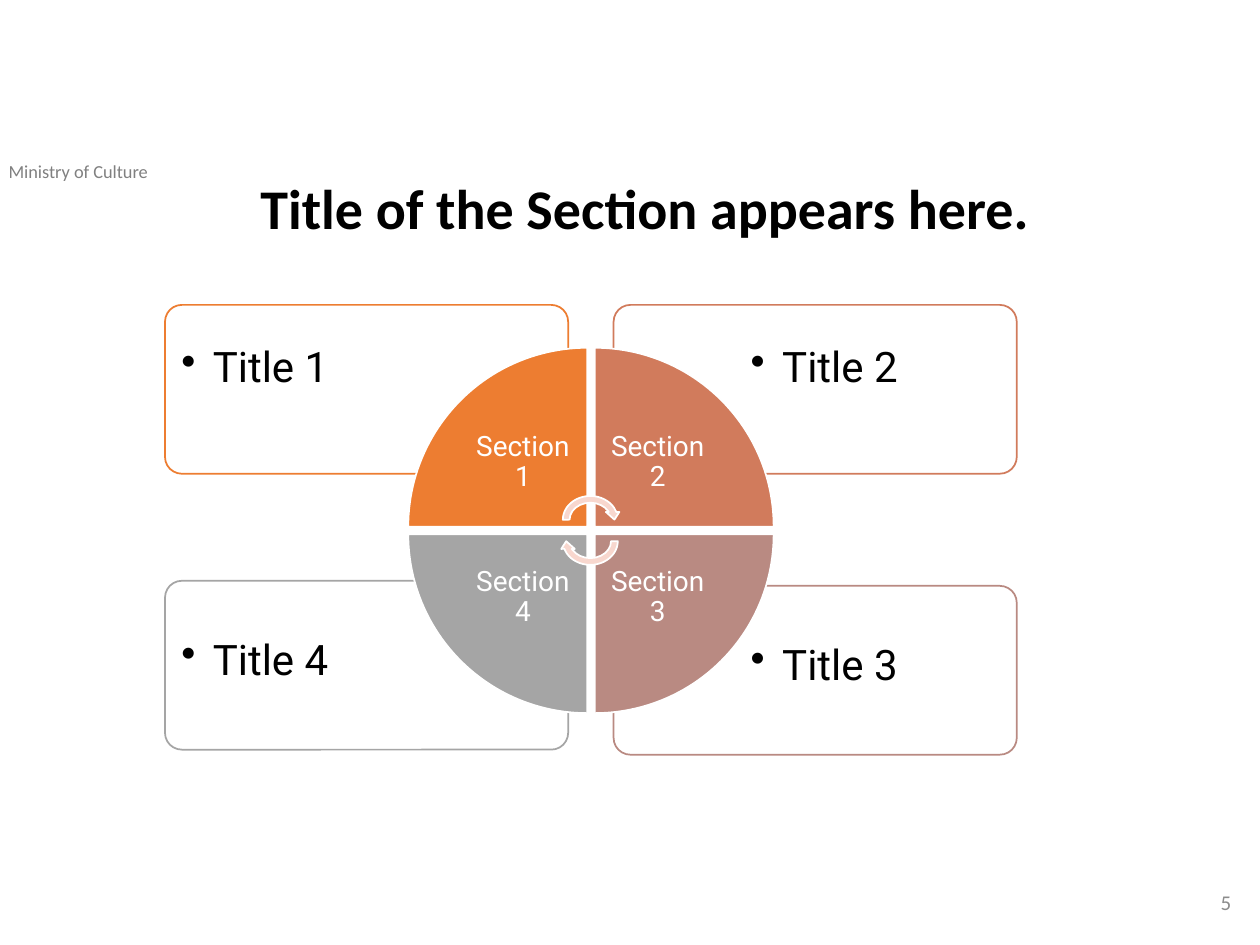
from lxml import etree
from pptx import Presentation
from pptx.dml.color import RGBColor
from pptx.enum.shapes import MSO_SHAPE
from pptx.enum.text import MSO_ANCHOR, MSO_AUTO_SIZE, PP_ALIGN
from pptx.oxml.ns import qn
from pptx.util import Inches, Pt

TOP, MIDDLE = MSO_ANCHOR.TOP, MSO_ANCHOR.MIDDLE
LEFT, CENTER, RIGHT = PP_ALIGN.LEFT, PP_ALIGN.CENTER, PP_ALIGN.RIGHT
CARD, WEDGE, ARROW = MSO_SHAPE.ROUNDED_RECTANGLE, MSO_SHAPE.PIE_WEDGE, MSO_SHAPE.CIRCULAR_ARROW

COLORS = {
    "white": "FFFFFF", "black": "000000", "header": "808080", "number": "8C8C8C",
    "orange": "ED7D31", "coral": "D17B5C", "rose": "B98A82", "gray": "A5A5A5",
    "arrow": "F8D7CE",
}
HEADER = "Ministry of Culture"
TITLE = "Title of the Section appears here."
PAGE_NUMBER = "5"
SECTIONS = [
    {"title": "Title 1", "label": "Section 1", "color": "orange", "column": 0, "row": 0, "card_top": 2.42},
    {"title": "Title 2", "label": "Section 2", "color": "coral", "column": 1, "row": 0, "card_top": 2.42},
    {"title": "Title 3", "label": "Section 3", "color": "rose", "column": 1, "row": 1, "card_top": 4.65},
    {"title": "Title 4", "label": "Section 4", "color": "gray", "column": 0, "row": 1, "card_top": 4.61},
]
CARD_LEFTS = (1.31, 4.87)
CARD_WIDTH, CARD_HEIGHT = 3.2, 1.34
TEXT_WIDTH, TEXT_HEIGHT, TEXT_MARGIN = 2.18, 0.95, 0.03
WEDGE_LEFTS, WEDGE_TOPS, WEDGE_SIZE = (3.24, 4.72), (2.76, 4.24), 1.42
LABEL_LEFTS, LABEL_TOPS, LABEL_SIZE = (3.65, 4.72), (3.17, 4.24), 1
ARROWS = [(3.91, 0), (4.08, 180)]


def rgb(name):
    return RGBColor.from_string(COLORS[name])


def place(item, left, top, width, height):
    item.left, item.top = Inches(left), Inches(top)
    item.width, item.height = Inches(width), Inches(height)


def write(box, text, size, color, font="Calibri", bold=False, align=LEFT, anchor=TOP,
          inset=None, spacing=None, bullet=False):
    frame = box.text_frame
    frame.word_wrap = True
    frame.auto_size = MSO_AUTO_SIZE.NONE
    frame.vertical_anchor = anchor
    if inset is not None:
        frame.margin_left = frame.margin_right = Inches(inset)
        frame.margin_top = frame.margin_bottom = Inches(inset)
    para = frame.paragraphs[0]
    if bullet:
        properties = para._p.get_or_add_pPr()
        properties.set("marL", str(Inches(0.25)))
        properties.set("indent", str(Inches(-0.25)))
        etree.SubElement(properties, qn("a:buChar"), char="•")
    para.alignment = align
    para.space_before = Pt(0)
    if spacing:
        para.line_spacing = spacing
    span = para.add_run()
    span.text = text
    span.font.name = font
    span.font.size = Pt(size)
    span.font.bold = bold
    span.font.color.rgb = rgb(color)


def add_text(page, area, text, **style):
    box = page.shapes.add_textbox(*map(Inches, area))
    write(box, text, **style)


def add_figure(page, kind, area, fill, line, rotation=0):
    shape = page.shapes.add_shape(kind, *map(Inches, area))
    shape.shadow.inherit = False
    shape.rotation = rotation
    shape.fill.solid()
    shape.fill.fore_color.rgb = rgb(fill)
    shape.line.color.rgb = rgb(line)
    shape.line.width = Pt(1)
    return shape


def add_card(page, section):
    column, top = section["column"], section["card_top"]
    left = CARD_LEFTS[column]
    card = add_figure(page, CARD, (left, top, CARD_WIDTH, CARD_HEIGHT), "white", section["color"])
    card.adjustments[0] = 0.1
    color = card._element.spPr.find(qn("a:solidFill")).find(qn("a:srgbClr"))
    etree.SubElement(color, qn("a:alpha"), val="90000")
    text_left = left + (CARD_WIDTH - TEXT_WIDTH - TEXT_MARGIN if column else TEXT_MARGIN)
    text_top = top + (CARD_HEIGHT - TEXT_HEIGHT - TEXT_MARGIN if section["row"] else TEXT_MARGIN)
    add_text(page, (text_left, text_top, TEXT_WIDTH, TEXT_HEIGHT), section["title"],
             size=24, color="black", font="Roboto", inset=0.1, spacing=0.9, bullet=True,
             anchor=TOP if section["row"] else MIDDLE)


def add_wedge(page, section, rotation):
    column, row = section["column"], section["row"]
    add_figure(page, WEDGE, (WEDGE_LEFTS[column], WEDGE_TOPS[row], WEDGE_SIZE, WEDGE_SIZE),
               section["color"], "white", rotation)
    add_text(page, (LABEL_LEFTS[column], LABEL_TOPS[row], LABEL_SIZE, LABEL_SIZE),
             section["label"], size=16, color="white", font="Roboto", align=CENTER,
             anchor=MIDDLE, inset=0.12, spacing=0.9)


def main():
    deck = Presentation()
    deck.slide_width, deck.slide_height = Inches(10), Inches(7.5)
    page = deck.slides.add_slide(deck.slide_layouts[5])
    title = page.shapes.title
    place(title, 1.93, 1.39, 6.38, 0.79)
    write(title, TITLE, size=32, color="black", bold=True, align=CENTER, spacing=0.9)
    add_text(page, (-0.03, 1.22, 2.18, 0.28), HEADER, size=10.5, color="header")
    for section in reversed(SECTIONS):
        add_card(page, section)
    for index, section in enumerate(SECTIONS):
        add_wedge(page, section, index * 90)
    for top, rotation in ARROWS:
        add_figure(page, ARROW, (4.44, top, 0.49, 0.43), "arrow", "white", rotation)
    add_text(page, (7.62, 6.96, 2.25, 0.4), PAGE_NUMBER, size=12, color="number",
             align=RIGHT, anchor=MIDDLE)
    deck.save("out.pptx")


if __name__ == "__main__":
    main()
